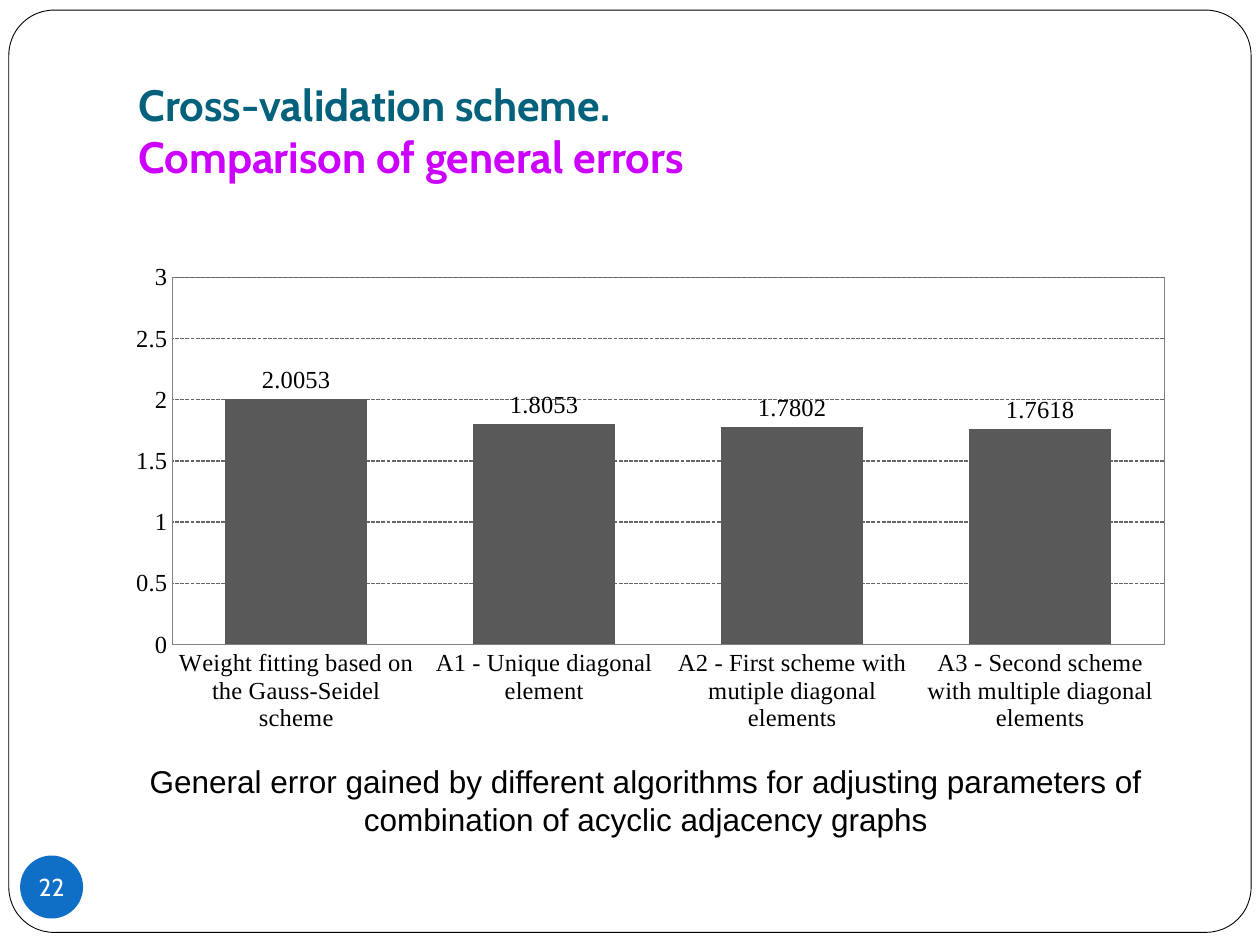
import pptx
import pptx.chart.data
import pptx.dml.color
import pptx.enum.chart
import pptx.enum.dml
import pptx.enum.shapes
import pptx.enum.text
import pptx.oxml
import pptx.oxml.ns
import pptx.util
from pptx.util import Inches

COLORS = {
    "white": "FFFFFF",
    "black": "000000",
    "teal": "04617B",
    "magenta": "CC00FF",
    "blue": "0F6FC6",
    "bar": "595959",
    "grid": "666666",
    "border": "808080",
}
ERRORS = {
    "Weight fitting based on the Gauss-Seidel scheme": 2.0053,
    "А1 - Unique diagonal element": 1.8053,
    "А2 - First scheme with mutiple diagonal elements": 1.7802,
    "А3 - Second scheme with multiple diagonal elements": 1.7618,
}
PLOT_BOX = {"x": 0.063, "y": 0.047, "w": 0.923, "h": 0.676}


def rgb(name):
    return pptx.dml.color.RGBColor.from_string(COLORS[name])


def style_font(font, family, size, color, bold=False):
    font.name = family
    font.size = pptx.util.Pt(size)
    font.bold = bold
    font.color.rgb = rgb(color)


def add_run(paragraph, text, *font_style):
    run = paragraph.add_run()
    run.text = text
    style_font(run.font, *font_style)


def set_line(line, color, width):
    line.color.rgb = rgb(color)
    line.width = pptx.util.Pt(width)


def add_frame(slide):
    """Draw the rounded page border behind everything else."""
    frame = slide.shapes.add_shape(
        pptx.enum.shapes.MSO_SHAPE.ROUNDED_RECTANGLE,
        Inches(0.07), Inches(0.08), Inches(9.86), Inches(7.32))
    frame.adjustments[0] = 0.049
    frame.shadow.inherit = False
    frame.fill.solid()
    frame.fill.fore_color.rgb = rgb("white")
    set_line(frame.line, "black", 0.5)
    slide.shapes.element.insert(2, frame.element)


def add_title(slide):
    title = slide.shapes.title
    title.left, title.top = Inches(1), Inches(0.3)
    title.width, title.height = Inches(8.5), Inches(1.25)
    frame = title.text_frame
    frame.word_wrap = True
    frame.auto_size = pptx.enum.text.MSO_AUTO_SIZE.NONE
    frame.vertical_anchor = pptx.enum.text.MSO_ANCHOR.BOTTOM
    frame.margin_bottom = Inches(0.1)
    heading = frame.paragraphs[0]
    heading.alignment = pptx.enum.text.PP_ALIGN.LEFT
    add_run(heading, "Cross-validation scheme. ", "Cabin", 25, "teal", True)
    heading.add_line_break()
    add_run(heading, "Comparison of general errors", "Cabin", 25, "magenta", True)


def add_page_number(slide):
    badge = slide.shapes.add_shape(
        pptx.enum.shapes.MSO_SHAPE.OVAL,
        Inches(0.16), Inches(6.79), Inches(0.5), Inches(0.5))
    badge.shadow.inherit = False
    badge.fill.solid()
    badge.fill.fore_color.rgb = rgb("blue")
    badge.line.fill.background()
    frame = badge.text_frame
    frame.word_wrap = False
    frame.vertical_anchor = pptx.enum.text.MSO_ANCHOR.MIDDLE
    frame.margin_left = frame.margin_right = 0
    frame.margin_top = frame.margin_bottom = 0
    number = frame.paragraphs[0]
    number.alignment = pptx.enum.text.PP_ALIGN.CENTER
    add_run(number, "22", "Cabin", 14, "white")


def format_plot_area(chart):
    """Fix the inner plot position and outline it."""
    plot_area = chart._chartSpace.chart.plotArea
    for layout in plot_area.findall(pptx.oxml.ns.qn("c:layout")):
        plot_area.remove(layout)
    modes = '<c:xMode val="edge"/><c:yMode val="edge"/>'
    box = "".join(f'<c:{side} val="{share}"/>' for side, share in PLOT_BOX.items())
    plot_area.insert(0, pptx.oxml.parse_xml(
        f'<c:layout {pptx.oxml.ns.nsdecls("c")}><c:manualLayout>'
        f'<c:layoutTarget val="inner"/>{modes}{box}'
        '</c:manualLayout></c:layout>'))
    plot_area.append(pptx.oxml.parse_xml(
        f'<c:spPr {pptx.oxml.ns.nsdecls("c", "a")}><a:noFill/>'
        f'<a:ln w="9525"><a:solidFill><a:srgbClr val="{COLORS["border"]}"/>'
        '</a:solidFill></a:ln></c:spPr>'))


def format_axes(chart):
    for axis in (chart.category_axis, chart.value_axis):
        axis.major_tick_mark = pptx.enum.chart.XL_TICK_MARK.NONE
        axis.minor_tick_mark = pptx.enum.chart.XL_TICK_MARK.NONE
        set_line(axis.format.line, "border", 0.75)
    errors = chart.value_axis
    errors.minimum_scale, errors.maximum_scale, errors.major_unit = 0, 3, 0.5
    errors.tick_labels.number_format = "General"
    errors.tick_labels.number_format_is_linked = False
    errors.has_major_gridlines = True
    grid = errors.major_gridlines.format.line
    set_line(grid, "grid", 0.75)
    grid.dash_style = pptx.enum.dml.MSO_LINE.SQUARE_DOT


def add_error_chart(slide):
    data = pptx.chart.data.CategoryChartData()
    data.categories = list(ERRORS)
    data.add_series("Series 1", list(ERRORS.values()))
    chart = slide.shapes.add_chart(
        pptx.enum.chart.XL_CHART_TYPE.COLUMN_CLUSTERED,
        Inches(0.83), Inches(2), Inches(8.53), Inches(4.31), data).chart
    chart.has_legend = False
    chart.has_title = False
    style_font(chart.font, "Times New Roman", 14, "black")
    format_axes(chart)
    format_plot_area(chart)

    columns = chart.plots[0]
    columns.gap_width = 75
    columns.vary_by_categories = False
    bars = columns.series[0]
    bars.format.fill.solid()
    bars.format.fill.fore_color.rgb = rgb("bar")
    labels = bars.data_labels
    labels.show_value = True
    labels.position = pptx.enum.chart.XL_LABEL_POSITION.OUTSIDE_END
    style_font(labels.font, "Times New Roman", 14, "black")


def add_caption(slide):
    frame = slide.shapes.add_textbox(
        Inches(0.5), Inches(6), Inches(9.25), Inches(1.01)).text_frame
    frame.word_wrap = True
    caption = frame.paragraphs[0]
    caption.alignment = pptx.enum.text.PP_ALIGN.CENTER
    add_run(caption,
            "General error gained by different algorithms for adjusting "
            "parameters of combination of acyclic adjacency graphs",
            "Arial", 18, "black")


def main():
    deck = pptx.Presentation()
    deck.slide_width, deck.slide_height = Inches(10), Inches(7.5)
    slide = deck.slides.add_slide(deck.slide_layouts.get_by_name("Title Only"))
    add_frame(slide)
    add_title(slide)
    add_page_number(slide)
    add_error_chart(slide)
    add_caption(slide)
    deck.save("out.pptx")


if __name__ == "__main__":
    main()
